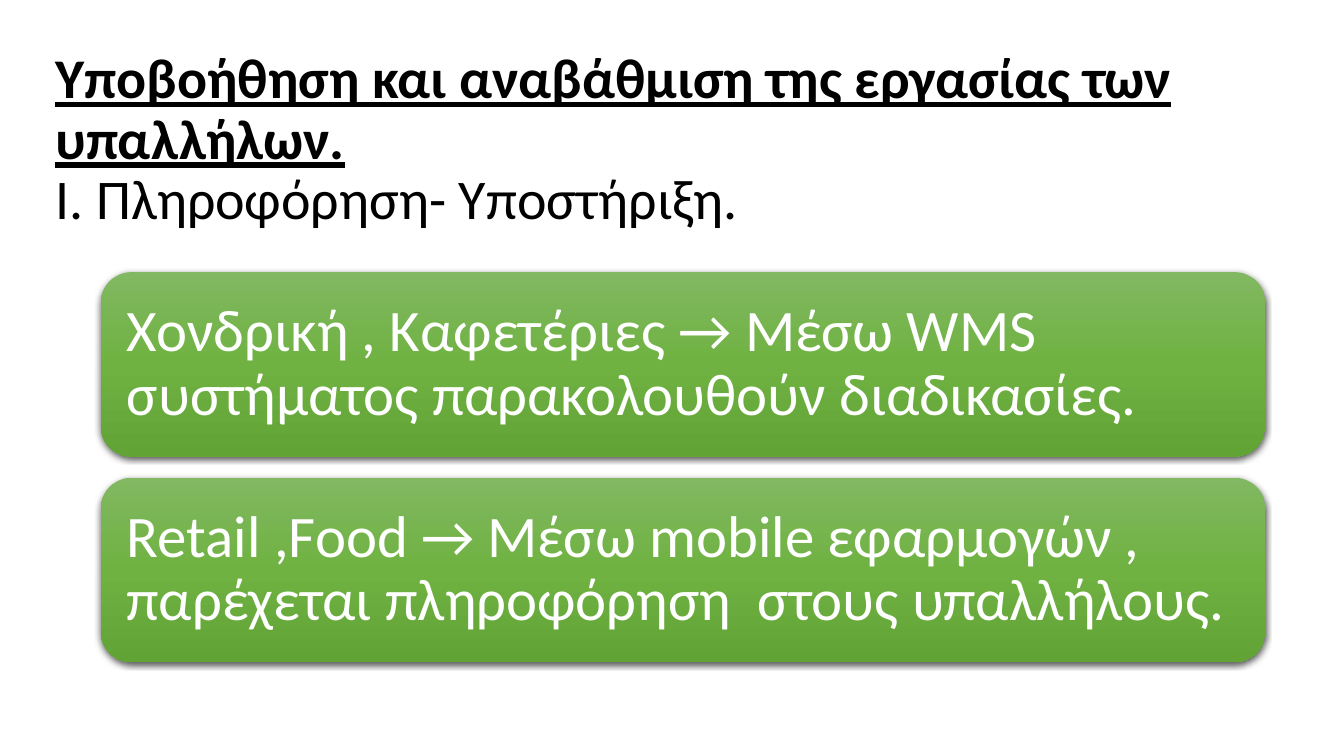
from pptx import Presentation
from pptx.dml.color import RGBColor
from pptx.enum.shapes import MSO_SHAPE as SHAPE
from pptx.enum.text import MSO_ANCHOR as ANCHOR, MSO_AUTO_SIZE as AUTO, PP_ALIGN as ALIGN
from pptx.oxml import parse_xml
from pptx.oxml.ns import nsdecls, qn
from pptx.util import Inches, Pt

GREENS = [(0, "81B861"), (50, "6FB242"), (100, "62A336")]
CARDS = [
    "Χονδρική , Καφετέριες → Μέσω WMS συστήματος παρακολουθούν διαδικασίες.",
    "Retail ,Food → Μέσω mobile εφαρμογών , παρέχεται πληροφόρηση  στους υπαλλήλους.",
]
CARD_TOP, CARD_STEP = 2.7, 2.04


def add_run(p, text, size, color, bold=False, underline=False):
    r = p.add_run()
    r.text = text
    r.font.name = "Calibri"
    r.font.size = Pt(size)
    r.font.bold = bold
    r.font.underline = underline
    r.font.color.rgb = RGBColor.from_string(color)


def style_card(sp):
    """Give the card a vertical green gradient and a soft shadow below."""
    sp.line.fill.background()
    sp.shadow.inherit = False
    sp.fill.gradient()
    sp.fill.gradient_angle = 270
    spPr = sp._element.spPr
    stops = spPr.find(qn("a:gradFill")).find(qn("a:gsLst"))
    stops.clear()
    for pos, color in GREENS:
        stops.append(parse_xml(
            f'<a:gs {nsdecls("a")} pos="{pos * 1000}"><a:srgbClr val="{color}"/></a:gs>'))
    spPr.find(qn("a:effectLst")).append(parse_xml(
        f'<a:outerShdw {nsdecls("a")} blurRad="{Pt(4.5)}" dist="{Pt(1.5)}" dir="5400000" '
        'algn="ctr" rotWithShape="0"><a:srgbClr val="000000"><a:alpha val="63000"/>'
        '</a:srgbClr></a:outerShdw>'))


prs = Presentation()
prs.slide_width, prs.slide_height = Inches(13.33), Inches(7.5)
s = prs.slides.add_slide(prs.slide_layouts[5])

title = s.shapes.title
title.left, title.top = Inches(0.45), Inches(0.45)
title.width, title.height = Inches(12.54), Inches(2.44)
tf = title.text_frame
tf.word_wrap = True
tf.auto_size = AUTO.NONE
tf.vertical_anchor = ANCHOR.TOP
p = tf.paragraphs[0]
p.alignment = ALIGN.LEFT
p.line_spacing = 0.9
add_run(p, "Υποβοήθηση και αναβάθμιση της εργασίας των υπαλλήλων.", 40, "000000", True, True)
p.add_line_break()
add_run(p, "Ι. Πληροφόρηση- Υποστήριξη.", 40, "000000")

for i, text in enumerate(CARDS):
    sp = s.shapes.add_shape(SHAPE.ROUNDED_RECTANGLE, Inches(1),
                            Inches(CARD_TOP + i * CARD_STEP), Inches(11.55), Inches(1.83))
    style_card(sp)
    tf = sp.text_frame
    tf.word_wrap = True
    tf.vertical_anchor = ANCHOR.MIDDLE
    # The rounded corners already inset the text by about 0.09 inches
    tf.margin_left = tf.margin_right = tf.margin_top = tf.margin_bottom = Inches(0.17)
    p = tf.paragraphs[0]
    p.alignment = ALIGN.LEFT
    p.line_spacing = 0.9
    add_run(p, text, 42, "FFFFFF")

prs.save("out.pptx")
